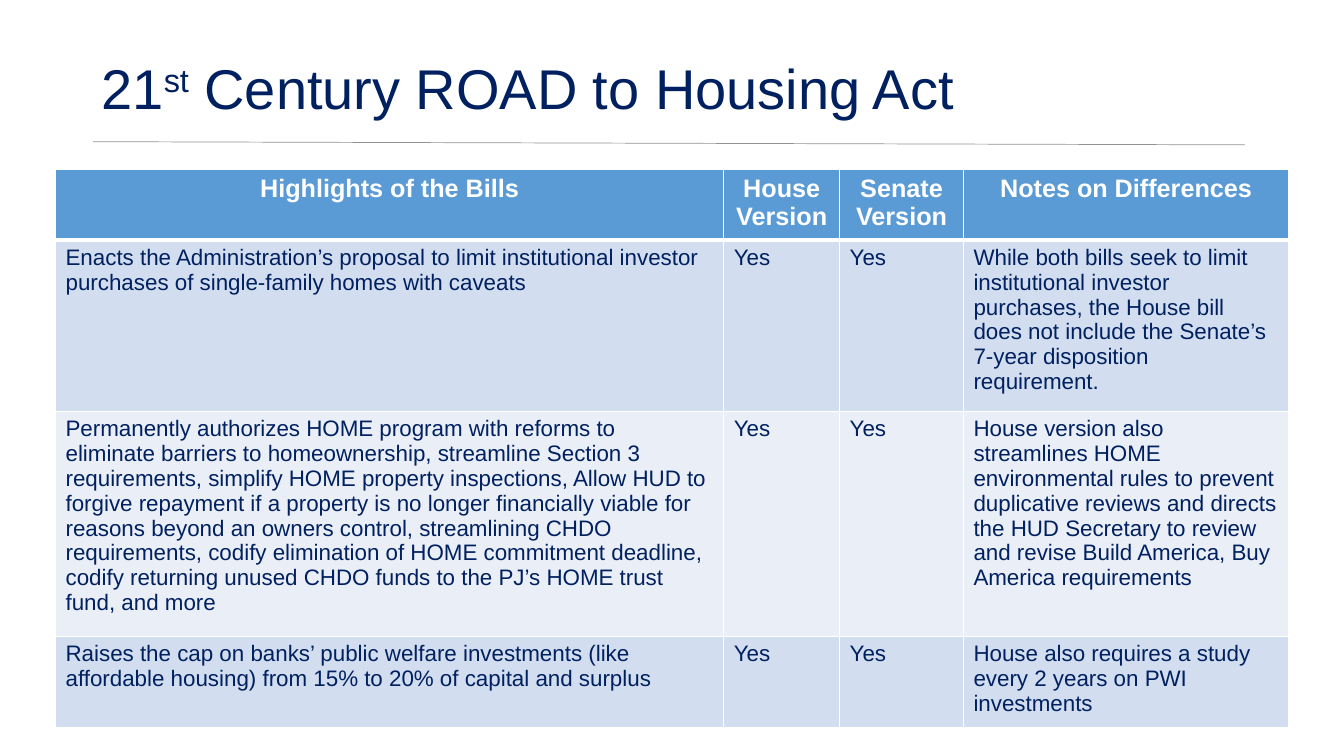
"""Builds a slide comparing the House and Senate housing bills in a table."""
import pptx
import pptx.dml.color
import pptx.enum.shapes
import pptx.enum.text
import pptx.oxml
import pptx.oxml.ns
import pptx.util

Cm = pptx.util.Cm
NAVY, WHITE, HEADER_BLUE = "002060", "FFFFFF", "5B9BD5"
BANDS = ["D2DEEF", "EAEFF7"]


def color(hex_text):
    return pptx.dml.color.RGBColor.from_string(hex_text)


def write(para, text, size=16, fill=NAVY, bold=False, baseline=None):
    span = para.add_run()
    span.text = text
    span.font.name = "Arial"
    span.font.size = pptx.util.Pt(size)
    span.font.bold = bold
    span.font.color.rgb = color(fill)
    if baseline:
        span.font._element.set("baseline", str(baseline))


deck = pptx.Presentation()
deck.slide_width, deck.slide_height = Cm(33.87), Cm(19.05)
page = deck.slides.add_slide(deck.slide_layouts[6])

rule = page.shapes.add_connector(
    pptx.enum.shapes.MSO_CONNECTOR.STRAIGHT, Cm(2.34), Cm(3.57), Cm(31.37), Cm(3.65))
rule.line.color.rgb = color("929292")
rule.line.width = pptx.util.Pt(0.5)
rule._element.spPr.append(pptx.oxml.parse_xml(
    f'<a:effectLst {pptx.oxml.ns.nsdecls("a")}/>'))

title = page.shapes.add_textbox(Cm(2.31), Cm(1.3), Cm(28.35), Cm(2)).text_frame
title.word_wrap = True
title.vertical_anchor = pptx.enum.text.MSO_ANCHOR.MIDDLE
title_para = title.paragraphs[0]
title_para.line_spacing = 0.9
write(title_para, "21", size=40)
write(title_para, "st", size=40, baseline=30000)
write(title_para, " Century ROAD to Housing Act", size=40)

bills = [
    ["Highlights of the Bills", "House Version", "Senate Version", "Notes on Differences"],
    ["Enacts the Administration’s proposal to limit institutional investor purchases of "
     "single-family homes with caveats",
     "Yes", "Yes",
     "While both bills seek to limit institutional investor purchases, the House bill does "
     "not include the Senate’s 7-year disposition requirement."],
    ["Permanently authorizes HOME program with reforms to eliminate barriers to "
     "homeownership, streamline Section 3 requirements, simplify HOME property inspections, "
     "Allow HUD to forgive repayment if a property is no longer financially viable for "
     "reasons beyond an owners control, streamlining CHDO requirements, codify elimination "
     "of HOME commitment deadline, codify returning unused CHDO funds to the PJ’s HOME trust "
     "fund, and more",
     "Yes", "Yes",
     "House version also streamlines HOME environmental rules to prevent duplicative reviews "
     "and directs the HUD Secretary to review and revise Build America, Buy America "
     "requirements"],
    ["Raises the cap on banks’ public welfare investments (like affordable housing) from 15% "
     "to 20% of capital and surplus",
     "Yes", "Yes",
     "House also requires a study every 2 years on PWI investments"],
]
column_widths = [16.84, 2.92, 3.12, 8.2]
row_heights = [1.6, 2.64, 5.08, 2.18]

frame = page.shapes.add_table(
    len(bills), len(column_widths), Cm(1.4), Cm(4.27),
    Cm(sum(column_widths)), Cm(sum(row_heights)))
table = frame.table
for column, width in zip(table.columns, column_widths):
    column.width = Cm(width)

for row_index, texts in enumerate(bills):
    table.rows[row_index].height = Cm(row_heights[row_index])
    is_header = row_index == 0
    border_points = {"L": 1, "R": 1, "T": 3 if row_index == 1 else 1, "B": 3 if is_header else 1}
    for column_index, text in enumerate(texts):
        cell = table.cell(row_index, column_index)
        for side, points in border_points.items():
            cell._tc.get_or_add_tcPr().append(pptx.oxml.parse_xml(
                f'<a:ln{side} {pptx.oxml.ns.nsdecls("a")} w="{pptx.util.Pt(points)}">'
                f'<a:solidFill><a:srgbClr val="{WHITE}"/></a:solidFill></a:ln{side}>'))
        cell.fill.solid()
        cell.fill.fore_color.rgb = color(HEADER_BLUE if is_header else BANDS[(row_index - 1) % 2])
        para = cell.text_frame.paragraphs[0]
        if is_header:
            para.alignment = pptx.enum.text.PP_ALIGN.CENTER
            write(para, text, size=18, fill=WHITE, bold=True)
        else:
            write(para, text)
            if column_index == 0:
                cell.margin_right = Cm(0.4)

frame.height = Cm(14.05)
deck.save("out.pptx")
